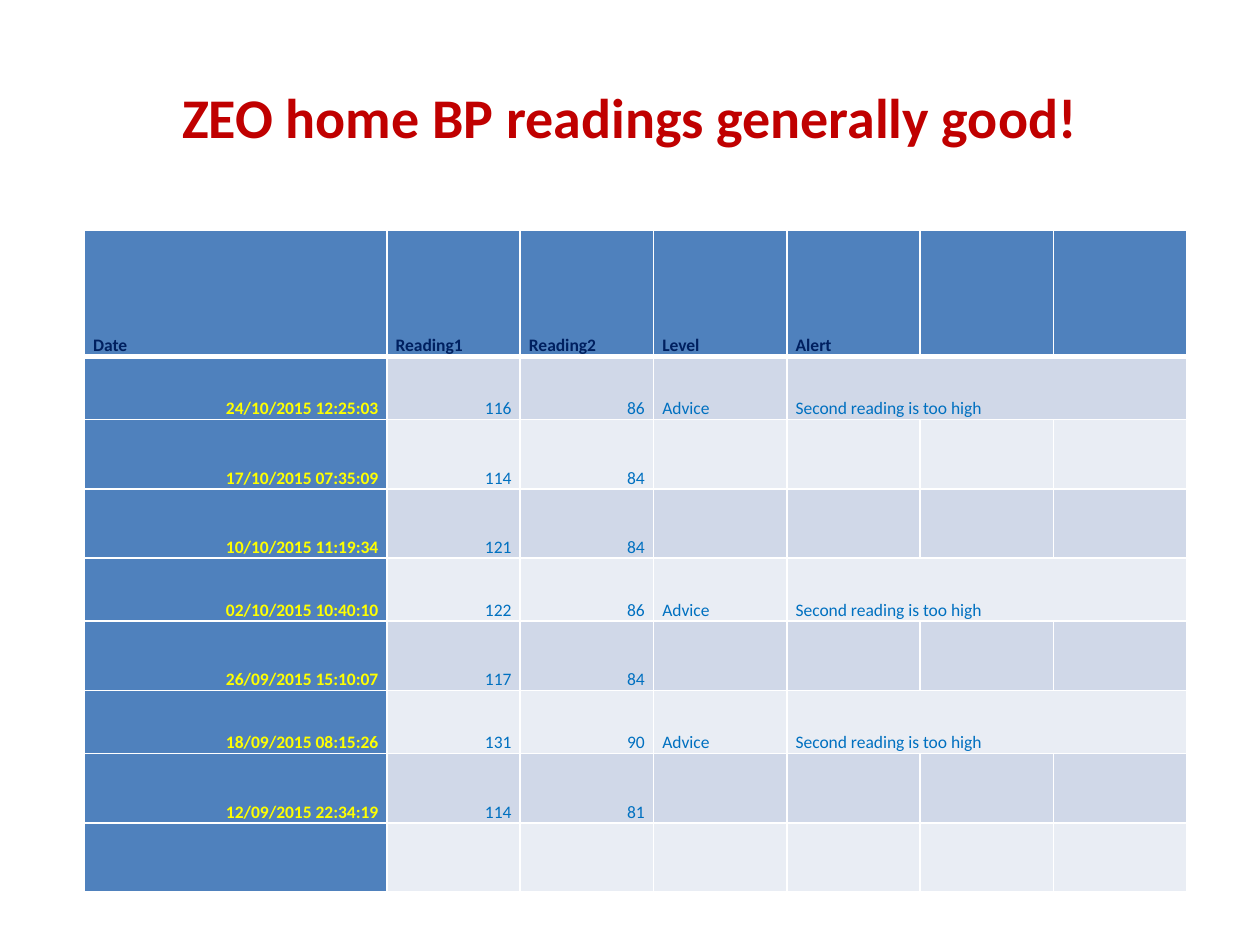
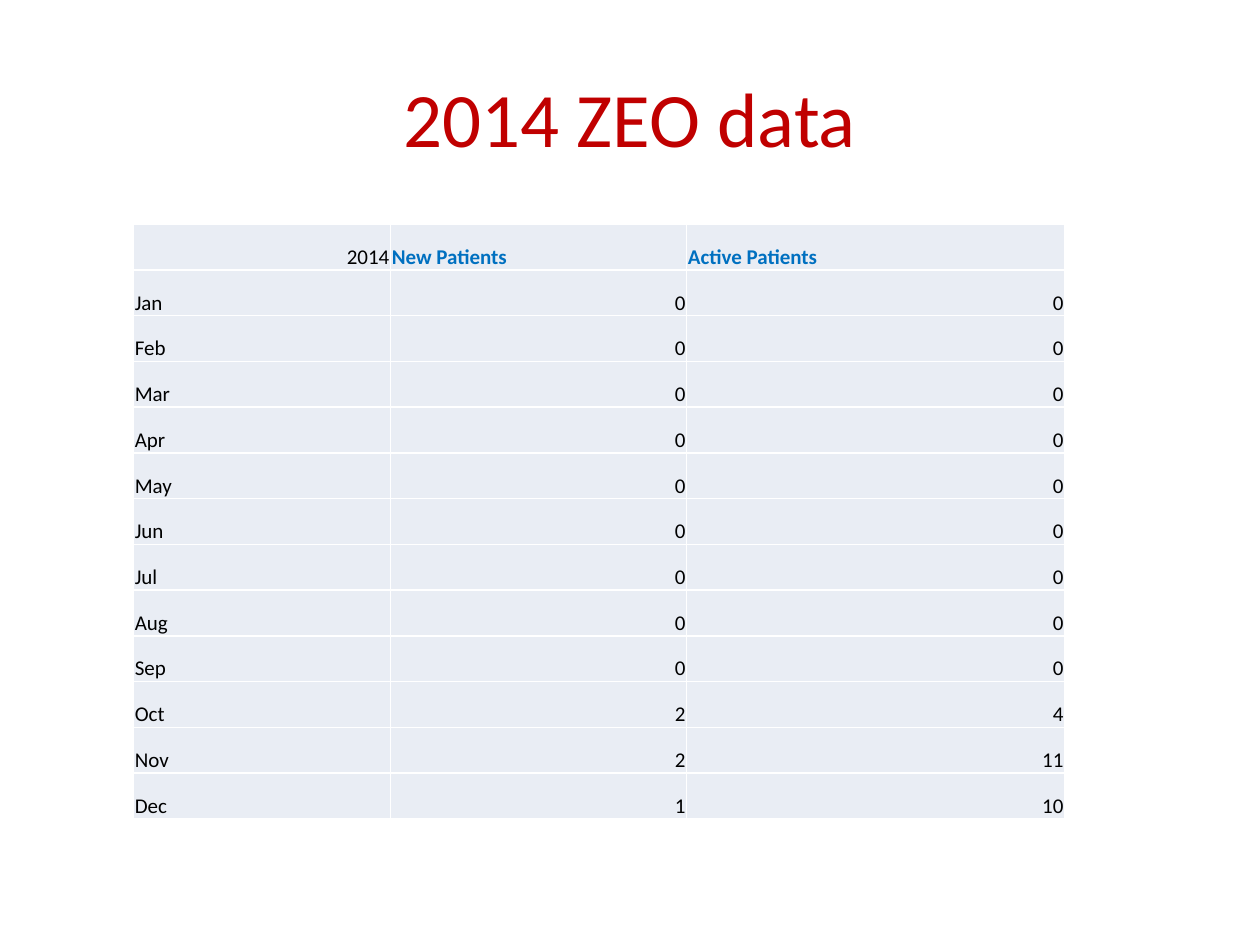
from lxml import etree
from pptx import Presentation
from pptx import util as u
from pptx.dml.color import RGBColor
from pptx.enum import text
from pptx.oxml.ns import qn

SLIDE_W, SLIDE_H = 10, 7.5
FONT = "Calibri"
RED, NAVY, BLUE = "C00000", "002060", "0070C0"
YELLOW, WHITE, BLACK = "FFFF00", "FFFFFF", "000000"
HEADER, BAND, PALE = "4F81BD", "D0D8E8", "E9EDF4"
LEFT, CENTER, RIGHT = (text.PP_ALIGN.LEFT, text.PP_ALIGN.CENTER,
                       text.PP_ALIGN.RIGHT)
TITLE_BOX = (0.05 * SLIDE_W, 0.04 * SLIDE_H, 0.9 * SLIDE_W, SLIDE_H / 6)

SERVICE = "ZEO"
ALERT = ("Advice", "Second reading is too high")
READINGS = [
    ("24/10/2015 12:25:03", 116, 86, *ALERT),
    ("17/10/2015 07:35:09", 114, 84),
    ("10/10/2015 11:19:34", 121, 84),
    ("02/10/2015 10:40:10", 122, 86, *ALERT),
    ("26/09/2015 15:10:07", 117, 84),
    ("18/09/2015 08:15:26", 131, 90, *ALERT),
    ("12/09/2015 22:34:19", 114, 81),
    (),
]
MONTHS = "Jan Feb Mar Apr May Jun Jul Aug Sep Oct Nov Dec".split()
NEW_PATIENTS = [0] * 9 + [2, 2, 1]
ACTIVE_PATIENTS = [0] * 9 + [4, 11, 10]


def rgb(value):
    return RGBColor.from_string(value)


def set_all(obj, values):
    for name, value in values.items():
        setattr(obj, name, value)


def write(p, content, size, color, bold=False, align=LEFT, spacing=1.0):
    set_all(p, {"alignment": align, "line_spacing": spacing})
    r = p.add_run()
    r.text = str(content)
    set_all(r.font, {"name": FONT, "size": u.Pt(size), "bold": bold})
    r.font.color.rgb = rgb(color)


def add_title(slide, box, content, size, bold=False):
    sp = slide.shapes.add_textbox(*map(u.Inches, box))
    tf = sp.text_frame
    set_all(tf, {"word_wrap": True,
                 "vertical_anchor": text.MSO_ANCHOR.MIDDLE})
    write(tf.paragraphs[0], content, size, RED, bold, CENTER)


def add_grid(slide, box, widths, heights):
    """Add an unstyled table whose columns and rows have the given inches."""
    table = slide.shapes.add_table(
        len(heights), len(widths), *map(u.Inches, box)).table
    set_all(table, {"first_row": False, "horz_banding": False})
    for column, width in zip(table.columns, widths):
        column.width = u.Inches(width)
    for row, height in zip(table.rows, heights):
        row.height = u.Inches(height)
    return table


def style_cell(cell, fill, insets, top=1, bottom=1):
    """Set borders (points), fill and insets (left, top, right, bottom)."""
    tcPr = cell._tc.get_or_add_tcPr()
    for side, width in zip("LRTB", (1, 1, top, bottom)):
        ln = etree.SubElement(tcPr, qn(f"a:ln{side}"), w=str(u.Pt(width)))
        solid = etree.SubElement(ln, qn("a:solidFill"))
        etree.SubElement(solid, qn("a:srgbClr"), val=WHITE)
    cell.fill.solid()
    cell.fill.fore_color.rgb = rgb(fill)
    cell.vertical_anchor = text.MSO_ANCHOR.BOTTOM
    sides = ("margin_left", "margin_top", "margin_right", "margin_bottom")
    set_all(cell, dict(zip(sides, map(u.Inches, insets))))


def readings_table(slide, box):
    date_w, header_h, alert_h, plain_h = 2.4, 1, 0.5, 0.55
    widths = [date_w] + [(box[2] - date_w) / 6] * 6
    heights = [header_h] + [alert_h if len(row) == 5 else plain_h
                            for row in READINGS]
    table = add_grid(slide, box, widths, heights)
    rows = [("Date", "Reading1", "Reading2", "Level", "Alert")] + READINGS
    for i, row in enumerate(rows):
        for j in range(len(widths)):
            cell = table.cell(i, j)
            strong = i == 0 or j == 0
            fill = HEADER if strong else BAND if i % 2 else PALE
            style_cell(cell, fill, (0.07, 0, 0.07, 0),
                       top=3 if i == 1 else 1, bottom=3 if i == 0 else 1)
            if j < len(row):
                color = NAVY if i == 0 else YELLOW if j == 0 else BLUE
                align = RIGHT if i and j < 3 else LEFT
                write(cell.text_frame.paragraphs[0], row[j], 10, color,
                      strong, align, 1.15)
        if i and len(row) == 5:
            table.cell(i, 4).merge(table.cell(i, 6))


def patients_table(slide, box):
    rows = [(2014, "New Patients", "Active Patients"),
            *zip(MONTHS, NEW_PATIENTS, ACTIVE_PATIENTS)]
    table = add_grid(slide, box, (2.04, 2.35, 3),
                     [box[3] / len(rows)] * len(rows))
    for i, row in enumerate(rows):
        for j, value in enumerate(row):
            cell = table.cell(i, j)
            style_cell(cell, PALE, (0.01, 0.01, 0.01, 0))
            heading = i == 0 and j > 0
            write(cell.text_frame.paragraphs[0], value, 12,
                  BLUE if heading else BLACK, heading,
                  RIGHT if isinstance(value, int) else LEFT)


def main():
    prs = Presentation()
    set_all(prs, {"slide_width": u.Inches(SLIDE_W),
                  "slide_height": u.Inches(SLIDE_H)})
    blank = prs.slide_layouts[6]

    slide = prs.slides.add_slide(blank)
    add_title(slide, TITLE_BOX, f"{SERVICE} home BP readings generally good!",
              32, bold=True)
    readings_table(slide, (0.67, 1.83, 8.75, 5.25))

    slide = prs.slides.add_slide(blank)
    add_title(slide, TITLE_BOX, f"2014 {SERVICE} data", 44)
    patients_table(slide, (1.06, 1.78, 7.39, 4.72))

    prs.save("out.pptx")


if __name__ == "__main__":
    main()
